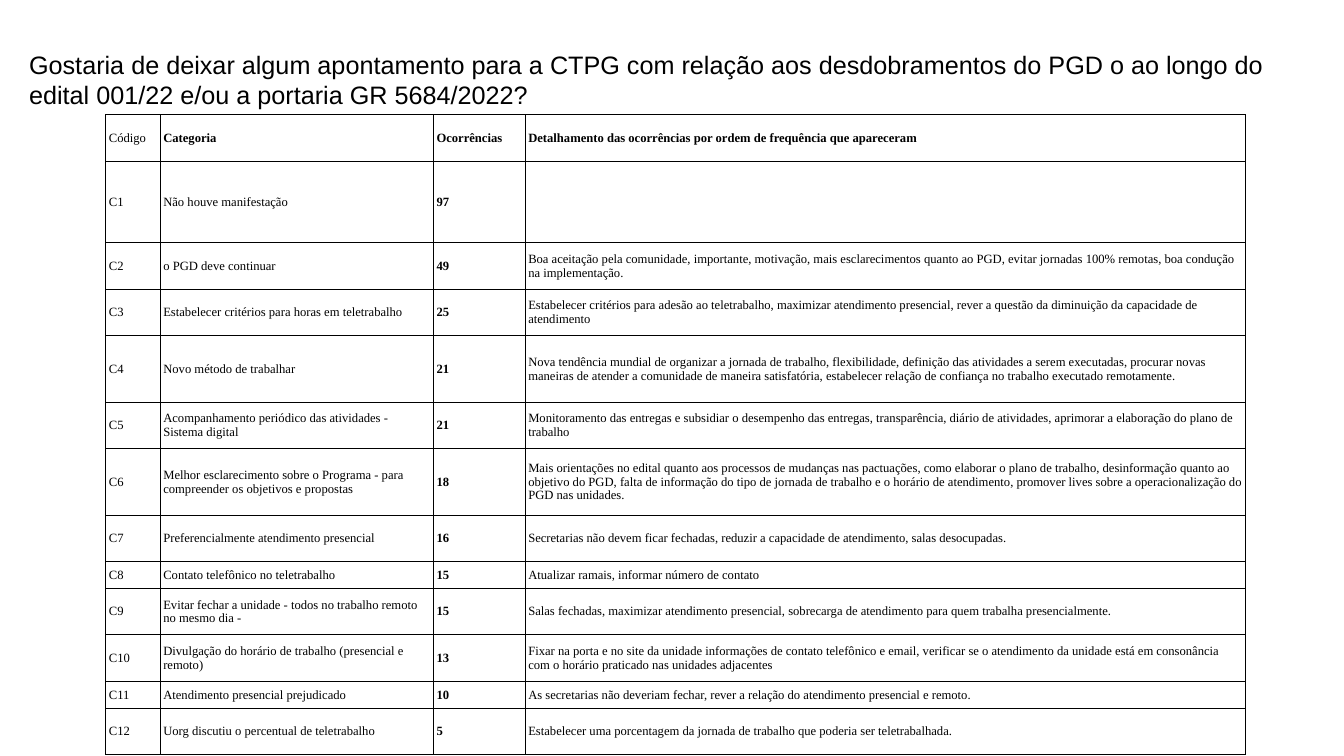
from lxml import etree
from pptx import Presentation
from pptx.dml.color import RGBColor
from pptx.enum.text import MSO_ANCHOR, MSO_AUTO_SIZE
from pptx.oxml.ns import qn
from pptx.util import Inches, Pt

MIDDLE = MSO_ANCHOR.MIDDLE
GROW = MSO_AUTO_SIZE.SHAPE_TO_FIT_TEXT

COLORS = {"text": "000000", "border": "000000", "cell": "FFFFFF"}

TITLE = (
    "Gostaria de deixar algum apontamento para a CTPG com relação aos "
    "desdobramentos do PGD o ao longo do edital 001/22 e/ou a portaria GR 5684/2022?"
)
HEADER = (
    "Código", "Categoria", "Ocorrências",
    "Detalhamento das ocorrências por ordem de frequência que apareceram",
)
COL_WIDTHS = (0.54, 2.71, 0.91, 7.14)
HEADER_HEIGHT = 0.46

# Row height, category, occurrences, details
CATEGORIES = [
    (0.81, "Não houve manifestação", 97, ""),
    (0.46, "o PGD deve continuar", 49,
     "Boa aceitação pela comunidade, importante, motivação, mais esclarecimentos "
     "quanto ao PGD, evitar jornadas 100% remotas, boa condução na implementação."),
    (0.46, "Estabelecer critérios para horas em teletrabalho", 25,
     "Estabelecer critérios para adesão ao teletrabalho, maximizar atendimento "
     "presencial, rever a questão da diminuição da capacidade de atendimento"),
    (0.66, "Novo método de trabalhar", 21,
     "Nova tendência mundial de organizar a jornada de trabalho, flexibilidade, "
     "definição das atividades a serem executadas, procurar novas maneiras de "
     "atender a comunidade de maneira satisfatória, estabelecer relação de "
     "confiança no trabalho executado remotamente."),
    (0.46, "Acompanhamento periódico das atividades - Sistema digital", 21,
     "Monitoramento das entregas e subsidiar o desempenho das entregas, "
     "transparência, diário de atividades, aprimorar a elaboração do plano de trabalho"),
    (0.66, "Melhor esclarecimento sobre o Programa - para compreender os "
     "objetivos e propostas", 18,
     "Mais orientações no edital quanto aos processos de mudanças nas pactuações, "
     "como elaborar o plano de trabalho, desinformação quanto ao objetivo do PGD, "
     "falta de informação do tipo de jornada de trabalho e o horário de "
     "atendimento, promover lives sobre a operacionalização do PGD nas unidades."),
    (0.46, "Preferencialmente atendimento presencial", 16,
     "Secretarias não devem ficar fechadas, reduzir a capacidade de atendimento, "
     "salas desocupadas."),
    (0.27, "Contato telefônico no teletrabalho", 15,
     "Atualizar ramais, informar número de contato"),
    (0.46, "Evitar fechar a unidade - todos no trabalho remoto no mesmo dia -", 15,
     "Salas fechadas, maximizar atendimento presencial, sobrecarga de atendimento "
     "para quem trabalha presencialmente."),
    (0.46, "Divulgação do horário de trabalho (presencial e remoto)", 13,
     "Fixar na porta e no site da unidade informações de contato telefônico e "
     "email, verificar se o atendimento da unidade está em consonância com o "
     "horário praticado nas unidades adjacentes"),
    (0.27, "Atendimento presencial prejudicado", 10,
     "As secretarias não deveriam fechar, rever a relação do atendimento "
     "presencial e remoto."),
    (0.46, "Uorg discutiu o percentual de teletrabalho", 5,
     "Estabelecer uma porcentagem da jornada de trabalho que poderia ser "
     "teletrabalhada."),
]


class SlideBuilder:
    def __init__(self, slide):
        self.slide = slide
        self.title_font, self.title_size = "Arial", Pt(18)
        self.table_font, self.table_size = "Times New Roman", Pt(9)
        self.border_width = Pt(0.75)

    def run(self, p, text, font, size, bold=False):
        r = p.add_run()
        r.text = text
        r.font.name, r.font.size, r.font.bold = font, size, bold
        r.font.color.rgb = RGBColor.from_string(COLORS["text"])

    def title(self, text, left, top, width, height):
        sp = self.slide.shapes.add_textbox(
            Inches(left), Inches(top), Inches(width), Inches(height))
        tf = sp.text_frame
        tf.word_wrap = True
        tf.auto_size = GROW
        self.run(tf.paragraphs[0], text, self.title_font, self.title_size)

    def borders(self, cell):
        tc_pr = cell._tc.get_or_add_tcPr()
        for i, side in enumerate(("a:lnL", "a:lnR", "a:lnT", "a:lnB")):
            ln = etree.Element(qn(side), w=str(self.border_width))
            fill = etree.SubElement(ln, qn("a:solidFill"))
            etree.SubElement(fill, qn("a:srgbClr"), val=COLORS["border"])
            tc_pr.insert(i, ln)

    def cell(self, cell, text, bold):
        cell.vertical_anchor = MIDDLE
        cell.margin_left = cell.margin_right = Inches(0.03)
        cell.margin_top = cell.margin_bottom = Inches(0.02)
        cell.fill.solid()
        cell.fill.fore_color.rgb = RGBColor.from_string(COLORS["cell"])
        self.borders(cell)
        if text:
            p = cell.text_frame.paragraphs[0]
            self.run(p, text, self.table_font, self.table_size, bold)

    def table(self, rows, widths, heights, left, top):
        """Draw a grid; the header (but its first cell) and the counts are bold."""
        table = self.slide.shapes.add_table(
            len(rows), len(widths), Inches(left), Inches(top),
            Inches(sum(widths)), Inches(sum(heights))).table
        table.first_row = table.horz_banding = False
        for column, width in zip(table.columns, widths):
            column.width = Inches(width)
        for row, height in zip(table.rows, heights):
            row.height = Inches(height)
        for i, row in enumerate(rows):
            for j, text in enumerate(row):
                self.cell(table.cell(i, j), text, j == 2 or (i == 0 and j > 0))


def main():
    prs = Presentation()
    prs.slide_width, prs.slide_height = Inches(13.33), Inches(7.5)
    s = SlideBuilder(prs.slides.add_slide(prs.slide_layouts[6]))

    s.title(TITLE, 0.19, 0.44, 12.65, 0.71)
    rows = [HEADER] + [
        (f"C{n}", category, str(count), details)
        for n, (_, category, count, details) in enumerate(CATEGORIES, 1)
    ]
    heights = [HEADER_HEIGHT] + [entry[0] for entry in CATEGORIES]
    s.table(rows, COL_WIDTHS, heights, 1.05, 1.14)

    prs.save("out.pptx")


if __name__ == "__main__":
    main()
